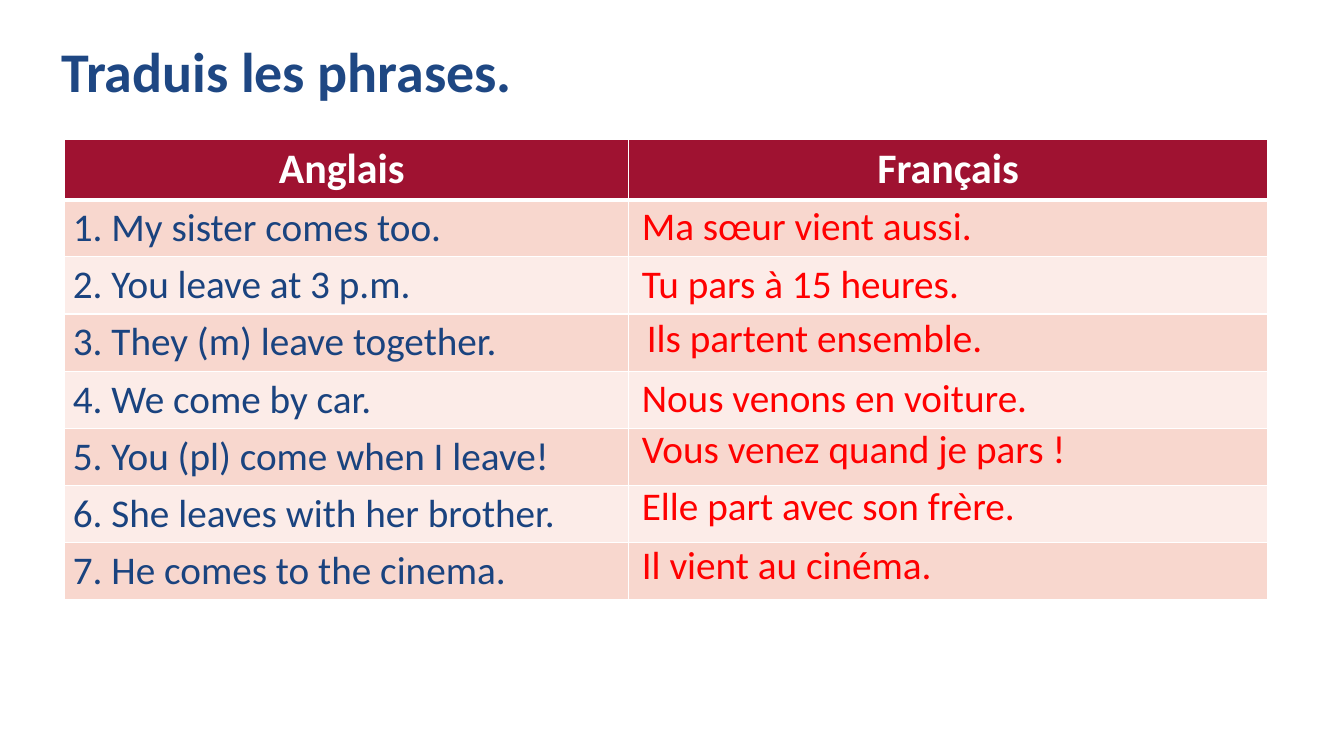
from dataclasses import dataclass

from lxml import etree
from pptx import Presentation
from pptx import util as u
from pptx.dml.color import RGBColor
from pptx.enum import text
from pptx.oxml import ns


@dataclass(frozen=True)
class Theme:
    font: str = "Calibri"
    title_ink: str = "1E4783"
    body_ink: str = "1A437F"
    answer_ink: str = "FF0000"
    white: str = "FFFFFF"
    header_fill: str = "9F1231"
    band_fills: tuple = ("F8D7CE", "FCECE8")
    title_size: int = 40
    header_size: int = 30
    body_size: int = 28


def write(frame, words, *, size, color, font, bold=False,
          align=text.PP_ALIGN.LEFT, spacing=None):
    """Put one formatted paragraph into a text frame."""
    para = frame.paragraphs[0]
    para.alignment = align
    if spacing:
        para.line_spacing = spacing
    span = para.add_run()
    span.text = words
    span.font.name = font
    span.font.size = u.Pt(size)
    span.font.bold = bold
    span.font.color.rgb = RGBColor.from_string(color)


class Page:
    def __init__(self, deck, theme):
        self.theme = theme
        self.slide = deck.slides.add_slide(deck.slide_layouts[5])

    def title(self, words, left, top, width, height):
        box = self.slide.shapes.title
        box.left, box.top = u.Pt(left), u.Pt(top)
        box.width, box.height = u.Pt(width), u.Pt(height)
        frame = box.text_frame
        frame.auto_size = text.MSO_AUTO_SIZE.NONE
        frame.vertical_anchor = text.MSO_ANCHOR.MIDDLE
        write(frame, words, size=self.theme.title_size, color=self.theme.title_ink,
              font=self.theme.font, bold=True, spacing=0.9)

    def answer(self, words, left, top, width, height):
        box = self.slide.shapes.add_textbox(
            u.Pt(left), u.Pt(top), u.Pt(width), u.Pt(height))
        frame = box.text_frame
        frame.word_wrap = True
        frame.auto_size = text.MSO_AUTO_SIZE.SHAPE_TO_FIT_TEXT
        write(frame, words, size=self.theme.body_size,
              color=self.theme.answer_ink, font=self.theme.font)

    def borders(self, cell, **widths):
        """Draw white cell borders, given in points by side: L, R, T, B."""
        properties = cell._tc.get_or_add_tcPr()
        for index, side in enumerate("LRTB"):
            line = etree.Element(ns.qn(f"a:ln{side}"), w=str(u.Pt(widths.get(side, 1))))
            fill = etree.SubElement(line, ns.qn("a:solidFill"))
            etree.SubElement(fill, ns.qn("a:srgbClr"), val=self.theme.white)
            properties.insert(index, line)

    def cell(self, cell, words, is_header, fill, **sides):
        theme = self.theme
        cell.margin_left = cell.margin_right = u.Pt(6)
        cell.margin_top = cell.margin_bottom = u.Pt(3.3)
        cell.fill.solid()
        cell.fill.fore_color.rgb = RGBColor.from_string(fill)
        self.borders(cell, **sides)
        if is_header:
            write(cell.text_frame, words, size=theme.header_size, color=theme.white,
                  font=theme.font, bold=True, align=text.PP_ALIGN.CENTER)
        elif words:
            write(cell.text_frame, words, size=theme.body_size,
                  color=theme.body_ink, font=theme.font)

    def table(self, rows, left, top, widths, header_height, row_height):
        heights = [header_height] + [row_height] * (len(rows) - 1)
        table = self.slide.shapes.add_table(
            len(rows), len(widths), u.Pt(left), u.Pt(top),
            u.Pt(sum(widths)), u.Pt(sum(heights))).table
        for column, width in zip(table.columns, widths):
            column.width = u.Pt(width)
        for r, (row, height) in enumerate(zip(rows, heights)):
            table.rows[r].height = u.Pt(height)
            fill = self.theme.band_fills[(r - 1) % 2] if r else self.theme.header_fill
            sides = {0: {"B": 3}, 1: {"T": 3}}.get(r, {})
            for c, words in enumerate(row):
                self.cell(table.cell(r, c), words, r == 0, fill, **sides)


# Sentences, with the left and top of each answer
SENTENCES = [
    ("1. My sister comes too.", "Ma sœur vient aussi.", 451.4, 140.4),
    ("2. You leave at 3 p.m.", "Tu pars à 15 heures.", 451.4, 181.4),
    ("3. They (m) leave together.", "Ils partent ensemble.", 455, 220.3),
    ("4. We come by car.", "Nous venons en voiture.", 451.4, 262.8),
    ("5. You (pl) come when I leave!", "Vous venez quand je pars !", 451.4, 299.5),
    ("6. She leaves with her brother.", "Elle part avec son frère.", 451.4, 340.6),
    ("7. He comes to the cinema.", "Il vient au cinéma.", 451.4, 382.3),
]


def main():
    deck = Presentation()
    deck.slide_width, deck.slide_height = u.Pt(960), u.Pt(540)
    page = Page(deck, Theme())

    # Heading
    page.title("Traduis les phrases.", 36.7, 28.8, 828, 49)

    # Exercise table, with an empty column for the answers
    rows = [("Anglais ", "Français")]
    rows += [(english, "") for english, *_ in SENTENCES]
    page.table(rows, 46.1, 99.4, (403, 456.5), 43, 40.8)

    # Answers laid over the second column
    for _, french, left, top in SENTENCES:
        page.answer(french, left, top, 464, 41)

    deck.save("out.pptx")


if __name__ == "__main__":
    main()
